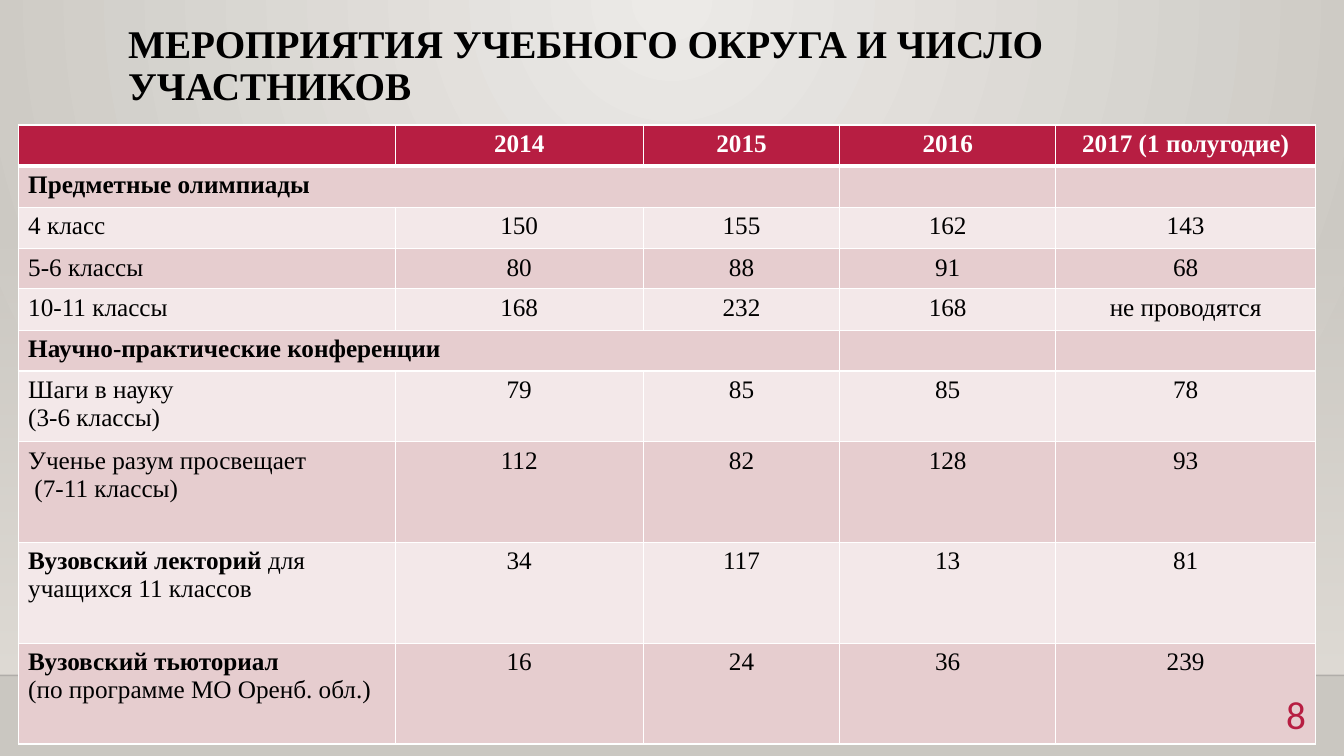
from lxml import etree
from pptx import Presentation, util as u
from pptx.dml.color import RGBColor
from pptx.enum import shapes, text
from pptx.oxml.ns import qn

COLORS = {
    "black": "000000", "white": "FFFFFF", "accent": "B71E42",
    "band": "E6CDCF", "row": "F3E8E9", "floor": "DFDBD5",
    "center": "ECEAE7", "edge": "CAC7C1", "horizon": "000001",
}
COLUMNS = [3.74, 2.46, 1.95, 2.14, 2.58]
ROWS = [0.41, 0.4] * 3 + [0.7, 1, 1, 1]
EVENTS = [
    ["", "**2014**", "**2015**", "**2016**", "**2017 (1 полугодие)**"],
    ["**Предметные олимпиады**"],
    ["4 класс", "150", "155", "162", "143"],
    ["5-6 классы", "80", "88", "91", "68"],
    ["10-11 классы", "168", "232", "168", "не проводятся"],
    ["**Научно-практические конференции**"],
    ["Шаги в науку\n(3-6 классы)", "79", "85", "85", "78"],
    ["Ученье разум просвещает\n (7-11 классы)", "112", "82", "128", "93"],
    ["**Вузовский лекторий **для учащихся 11 классов", "34", "117", "13", "81"],
    ["**Вузовский тьюториал**\n(по программе МО Оренб. обл.)", "16", "24", "36", "239"],
]


def rgb(name):
    """Return the named colour."""
    return RGBColor.from_string(COLORS[name])


def add_alpha(parent, percent):
    """Make the first colour inside an element translucent."""
    color = parent.find(".//" + qn("a:srgbClr"))
    etree.SubElement(color, qn("a:alpha"), val=str(percent * 1000))


class SlideBuilder:
    """Hold the current slide and its text style."""

    font = "Times New Roman"

    def __init__(self, deck):
        """Add a title-only slide to the deck."""
        self.slide = deck.slides.add_slide(deck.slide_layouts[5])
        self.width = deck.slide_width

    def style(self, run, size, color, bold=False, font=None):
        """Format one run."""
        run.font.name, run.font.size, run.font.bold = font or self.font, u.Pt(size), bold
        run.font.color.rgb = rgb(color)

    def background(self):
        """Paint the radial background."""
        fill = self.slide.background.fill
        fill.gradient()
        for stop, name in zip(fill.gradient_stops, ("center", "edge")):
            stop.color.rgb = rgb(name)
        gradient = self.slide.element.find(".//" + qn("a:gradFill"))
        gradient.remove(gradient.find(qn("a:lin")))
        circle = etree.SubElement(gradient, qn("a:path"), path="circle")
        etree.SubElement(circle, qn("a:fillToRect"), l="43000", r="43000", b="100000")

    def wall(self, top, height):
        """Add a band that fades in downwards."""
        wall = self.slide.shapes.add_shape(
            shapes.MSO_SHAPE.RECTANGLE, 0, u.Inches(top), self.width, u.Inches(height))
        wall.shadow.inherit = False
        wall.line.fill.background()
        wall.fill.gradient()
        wall.fill.gradient_angle = 270
        for stop in wall.fill.gradient_stops:
            stop.color.rgb = rgb("floor")
        add_alpha(wall.element.spPr, 0)

    def horizon(self, top):
        """Add a faint line across the slide."""
        line = self.slide.shapes.add_connector(
            shapes.MSO_CONNECTOR.STRAIGHT, 0, u.Inches(top), self.width, u.Inches(top))
        line.line.width = u.Pt(1)
        line.line.color.rgb = rgb("horizon")
        properties = line.element.spPr
        add_alpha(properties, 20)
        etree.SubElement(properties, qn("a:effectLst"))

    def title(self, wording, left, top, width, height):
        """Place and format the title."""
        title = self.slide.shapes.title
        title.left, title.top = u.Inches(left), u.Inches(top)
        title.width, title.height = u.Inches(width), u.Inches(height)
        frame = title.text_frame
        frame.text = wording
        frame.word_wrap = True
        frame.auto_size = text.MSO_AUTO_SIZE.NONE
        frame.vertical_anchor = text.MSO_ANCHOR.MIDDLE
        heading = frame.paragraphs[0]
        heading.alignment = text.PP_ALIGN.LEFT
        heading.line_spacing = 0.9
        self.style(heading.runs[0], 28, "black", True)

    def cell(self, cell, wording, color, fill, align, top, bottom):
        """Fill one table cell; double asterisks enclose bold words."""
        properties = cell._tc.get_or_add_tcPr()
        for side, width in zip("LRTB", (1, 1, top, bottom)):
            border = etree.SubElement(properties, qn("a:ln" + side), w=str(u.Pt(width)))
            solid = etree.SubElement(border, qn("a:solidFill"))
            etree.SubElement(solid, qn("a:srgbClr"), val=COLORS["white"])
        cell.fill.solid()
        cell.fill.fore_color.rgb = rgb(fill)
        frame = cell.text_frame
        for index, line in enumerate(wording.split("\n")):
            paragraph = frame.add_paragraph() if index else frame.paragraphs[0]
            paragraph.alignment = align
            for part, words in enumerate(line.split("**")):
                if words:
                    run = paragraph.add_run()
                    run.text = words
                    self.style(run, 18, color, part % 2 == 1)

    def table(self, rows, left, top):
        """Add the table of events; one-item rows are section headings."""
        table = self.slide.shapes.add_table(
            len(rows), len(COLUMNS), u.Inches(left), u.Inches(top),
            u.Inches(sum(COLUMNS)), u.Inches(sum(ROWS))).table
        table.first_row = table.horz_banding = False
        for column, width in zip(table.columns, COLUMNS):
            column.width = u.Inches(width)
        for r, values in enumerate(rows):
            table.rows[r].height = u.Inches(ROWS[r])
            color = "black" if r else "white"
            fill = ("row", "band")[r % 2] if r else "accent"
            for c in range(len(COLUMNS)):
                wording = values[c] if c < len(values) else ""
                align = text.PP_ALIGN.CENTER if c else text.PP_ALIGN.LEFT
                self.cell(table.cell(r, c), wording, color, fill, align,
                          3 if r == 1 else 1, 1 if r else 3)
            if len(values) == 1:
                table.cell(r, 0).merge(table.cell(r, 2))

    def page_number(self, number, left, top, width, height):
        """Add the page number."""
        frame = self.slide.shapes.add_textbox(
            u.Inches(left), u.Inches(top), u.Inches(width), u.Inches(height)).text_frame
        frame.text = number
        frame.word_wrap = True
        frame.vertical_anchor = text.MSO_ANCHOR.MIDDLE
        frame.paragraphs[0].alignment = text.PP_ALIGN.RIGHT
        self.style(frame.paragraphs[0].runs[0], 28, "accent", font="Calibri")


def main():
    """Build and save the slide."""
    deck = Presentation()
    deck.slide_width, deck.slide_height = u.Inches(13.33), u.Inches(7.5)
    events = SlideBuilder(deck)
    events.background()
    events.wall(2.21, 4.49)
    events.horizon(6.7)
    events.title("МЕРОПРИЯТИЯ УЧЕБНОГО ОКРУГА И ЧИСЛО УЧАСТНИКОВ", 1.17, 0.23, 11.87, 0.87)
    events.table(EVENTS, 0.18, 1.24)
    events.page_number("8", 12.16, 6.81, 0.89, 0.55)
    deck.save("out.pptx")


if __name__ == "__main__":
    main()
